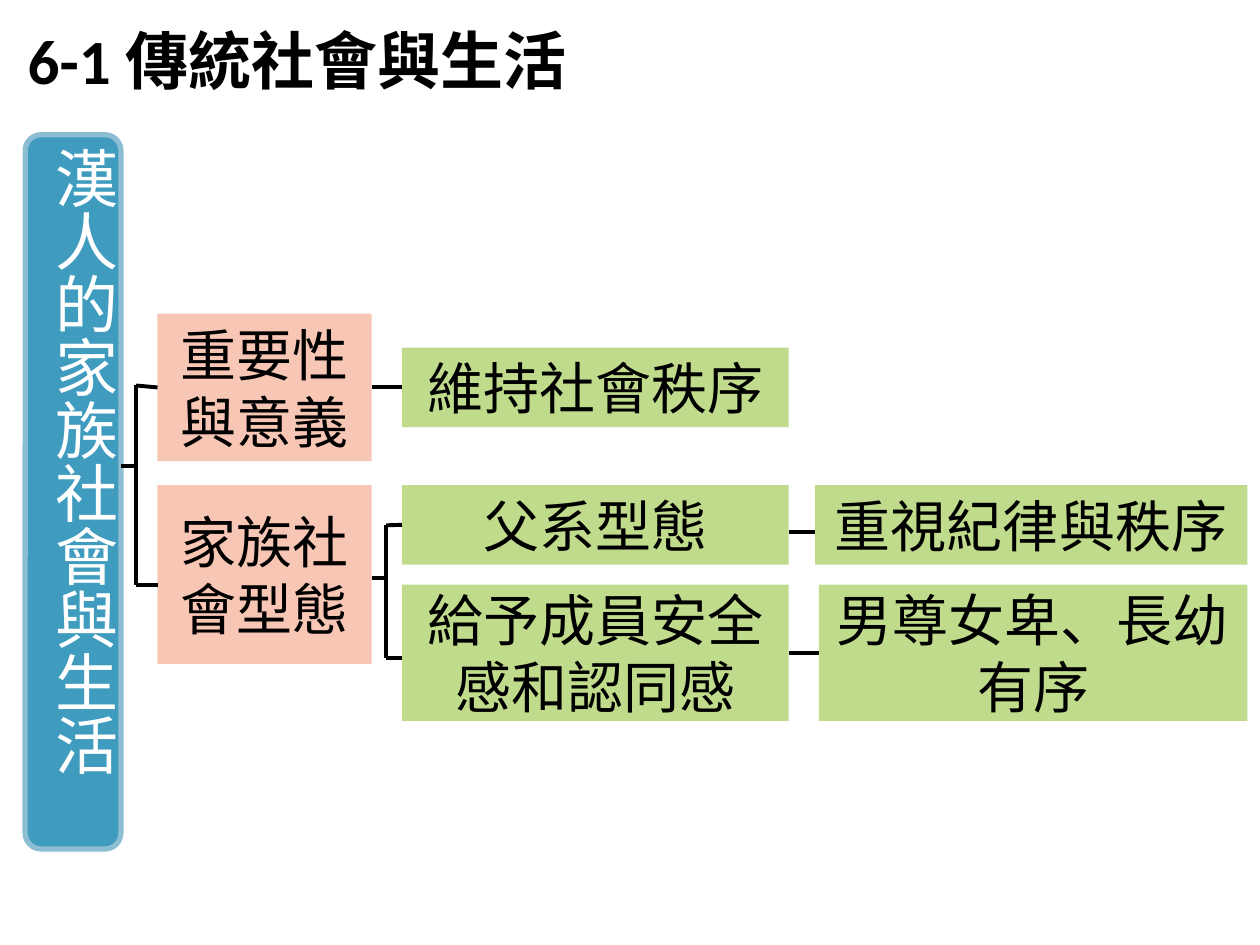
from dataclasses import dataclass

from lxml import etree
from pptx import Presentation
from pptx.dml.color import RGBColor
from pptx.enum import shapes, text
from pptx.oxml import ns
from pptx.util import Pt


@dataclass(frozen=True)
class Theme:
    black: str = "000000"
    white: str = "FFFFFF"
    topic: str = "F8C6B5"
    detail: str = "C0DB8C"
    bar: str = "3F9CBF"
    bar_edge: str = "8DBDD3"
    latin: str = "Calibri"
    chinese: str = "Noto Sans CJK SC"
    heading_size: int = 36
    box_size: int = 32
    line_width: float = 2.25
    bar_edge_width: float = 3


THEME = Theme()


def rgb(color):
    return RGBColor.from_string(color)


def add_text(paragraph, wording, size, color=THEME.black, font=THEME.chinese,
             bold=False, align=text.PP_ALIGN.CENTER):
    paragraph.alignment = align
    run = paragraph.add_run()
    run.text = wording
    run.font.name = font
    run.font.size = Pt(size)
    run.font.bold = bold
    run.font.color.rgb = rgb(color)
    east_asian = etree.SubElement(run.font._element, ns.qn("a:ea"))
    east_asian.set("typeface", font)


def add_panel(slide, box, fill, rounding=None):
    panel = slide.shapes.add_shape(
        shapes.MSO_SHAPE.ROUNDED_RECTANGLE, *map(Pt, box))
    panel.shadow.inherit = False
    panel.fill.solid()
    panel.fill.fore_color.rgb = rgb(fill)
    panel.line.fill.background()
    if rounding is not None:
        panel.adjustments[0] = rounding
    return panel


def add_box(slide, box, fill, *lines):
    """Square-cornered box with one paragraph for each line."""
    panel = add_panel(slide, box, fill, rounding=0)
    frame = panel.text_frame
    frame.word_wrap = True
    frame.vertical_anchor = text.MSO_ANCHOR.MIDDLE
    for index, line in enumerate(lines):
        paragraph = frame.add_paragraph() if index else frame.paragraphs[0]
        add_text(paragraph, line, THEME.box_size)
    return panel


def add_line(slide, x1, y1, x2, y2):
    line = slide.shapes.add_connector(
        shapes.MSO_CONNECTOR.STRAIGHT, *map(Pt, (x1, y1, x2, y2)))
    line.line.color.rgb = rgb(THEME.black)
    line.line.width = Pt(THEME.line_width)
    etree.SubElement(line._element.spPr, ns.qn("a:effectLst"))
    return line


def is_middle(panel, y):
    return abs((panel.top + panel.height / 2) - Pt(y)) <= Pt(1.5)


def link(slide, source, target, y):
    """Level line between facing sides, joined where it meets their middles."""
    line = add_line(slide, (source.left + source.width) / Pt(1), y,
                    target.left / Pt(1), y)
    if is_middle(source, y):
        line.begin_connect(source, 3)
    if is_middle(target, y):
        line.end_connect(target, 1)


def add_bracket(slide, source, spine_x, stem_y, branches):
    """Stem from source to a spine, and a branch to each (target, y)."""
    heights = [y for _, y in branches]
    add_line(slide, (source.left + source.width) / Pt(1), stem_y,
             spine_x, stem_y)
    add_line(slide, spine_x, min(heights), spine_x, max(heights))
    for target, y in branches:
        branch = add_line(slide, spine_x, y, target.left / Pt(1), y)
        if is_middle(target, y):
            branch.end_connect(target, 1)


def place_title(slide, box):
    title = slide.shapes.title
    title.left, title.top, title.width, title.height = map(Pt, box)
    frame = title.text_frame
    frame.word_wrap = False
    frame.auto_size = text.MSO_AUTO_SIZE.NONE
    frame.vertical_anchor = text.MSO_ANCHOR.TOP
    for wording, font in (("6-1 ", THEME.latin),
                          ("傳統社會與生活", THEME.chinese)):
        add_text(frame.paragraphs[0], wording, THEME.heading_size, font=font,
                 bold=True, align=text.PP_ALIGN.LEFT)


def place_subject_bar(slide, box):
    left, top, width, height = box
    bar = add_panel(slide, box, THEME.bar)
    bar.line.color.rgb = rgb(THEME.bar_edge)
    bar.line.width = Pt(THEME.bar_edge_width)
    label = slide.shapes.add_textbox(
        *map(Pt, (left + 0.7, top, width + 3.6, height - 17.2)))
    frame = label.text_frame
    frame.word_wrap = True
    frame._element.bodyPr.set("vert", "eaVert")
    add_text(frame.paragraphs[0], "漢人的家族社會與生活",
             THEME.heading_size, color=THEME.white)
    return bar


def place_tree(slide, box, bar):
    left, top, width, _ = box
    topic_width, detail_width = 122.4, 221
    detail_x = left + 139.7
    effect_x = left + 375.8
    right = left + width
    family_y = top + 97.9
    lower_y = top + 154.8
    short, tall = 45.4, 77.8

    meaning = add_box(slide, (left, top, topic_width, 84.2), THEME.topic,
                      "重要性", "與意義")
    family = add_box(slide, (left, family_y, topic_width, 102.2), THEME.topic,
                     "家族社", "會型態")
    order = add_box(slide, (detail_x, top + 19.4, detail_width, short),
                    THEME.detail, "維持社會秩序")
    paternal = add_box(slide, (detail_x, family_y, detail_width, short),
                       THEME.detail, "父系型態")
    security = add_box(slide, (detail_x, lower_y, detail_width, tall),
                       THEME.detail, "給予成員安全感和認同感")
    discipline = add_box(slide, (effect_x, family_y, right - effect_x, short),
                         THEME.detail, "重視紀律與秩序")
    rank = add_box(slide, (effect_x + 2.2, lower_y, right - effect_x - 2.2, tall),
                   THEME.detail, "男尊女卑、長幼有序")

    add_bracket(slide, bar, left - 12.2, top + 87.1,
                [(meaning, top + 41), (family, top + 154.8)])
    add_bracket(slide, family, left + 130.7, top + 151.2,
                [(paternal, top + 120.9), (security, top + 196.5)])
    link(slide, meaning, order, top + 42.1)
    link(slide, paternal, discipline, top + 124.5)
    link(slide, security, rank, top + 193.2)


def main():
    deck = Presentation()
    deck.slide_width, deck.slide_height = Pt(720), Pt(540)
    slide = deck.slides.add_slide(deck.slide_layouts.get_by_name("Title Only"))
    place_title(slide, (8.6, 8.6, 331.2, 51.1))
    bar = place_subject_bar(slide, (14.4, 77, 54.7, 408.2))
    place_tree(slide, (90, 179.3, 622.8, 232.6), bar)
    deck.save("out.pptx")


if __name__ == "__main__":
    main()
